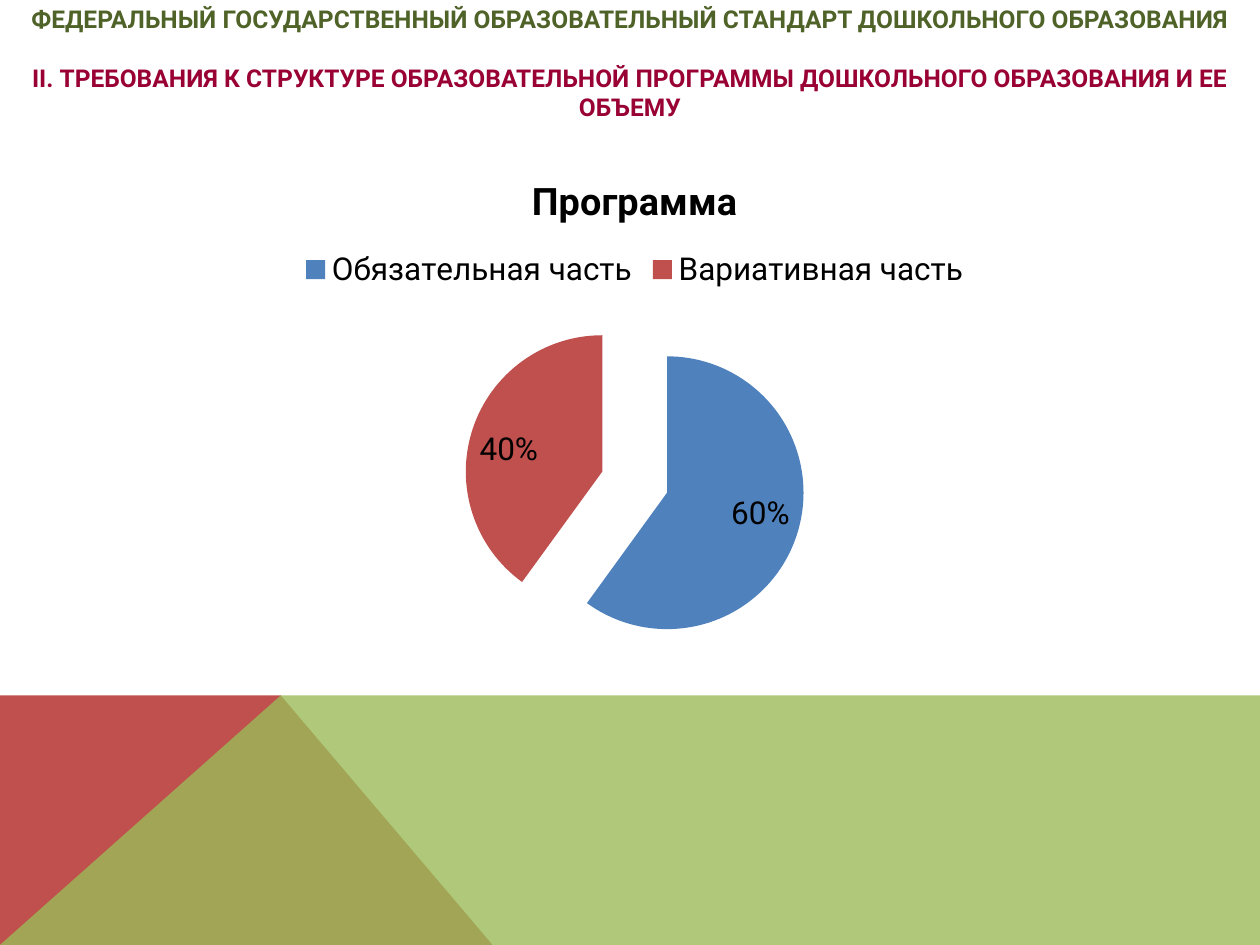
"""Build a slide with a pie chart of the parts of a preschool education programme."""
from dataclasses import dataclass
from typing import Optional

from lxml.etree import SubElement
from pptx import Presentation
from pptx.chart.data import CategoryChartData
from pptx.dml.color import RGBColor
from pptx.enum.chart import XL_CHART_TYPE, XL_LABEL_POSITION, XL_LEGEND_POSITION
from pptx.enum.text import MSO_ANCHOR, MSO_AUTO_SIZE, PP_ALIGN
from pptx.oxml import parse_xml
from pptx.oxml.ns import nsdecls, qn
from pptx.slide import Slide
from pptx.util import Cm, Pt

FONT = "Roboto"
WIDTH, HEIGHT, BAND_TOP, PEAK = 25.4, 19.05, 14.02, 5.66
COLORS = {
    "black": "000000",
    "heading": "4F6228",
    "subheading": "990033",
    "red": "C0504D",
    "blue": "4F81BD",
    "green": "9BBB59",
}


@dataclass
class Band:
    points: list[tuple[float, float]]
    color: str
    opacity: Optional[int] = None


@dataclass
class Heading:
    text: str
    color: str
    space_before: float = 0


@dataclass
class Part:
    name: str
    percent: int
    color: str


BANDS = [
    Band([(0, HEIGHT), (0, BAND_TOP), (PEAK, BAND_TOP), (9.93, HEIGHT)], "red"),
    Band([(0, HEIGHT), (PEAK, BAND_TOP), (WIDTH, BAND_TOP), (WIDTH, HEIGHT)], "green", 80),
]
HEADINGS = [
    Heading("ФЕДЕРАЛЬНЫЙ ГОСУДАРСТВЕННЫЙ ОБРАЗОВАТЕЛЬНЫЙ СТАНДАРТ ДОШКОЛЬНОГО ОБРАЗОВАНИЯ",
            "heading"),
    Heading("II. ТРЕБОВАНИЯ К СТРУКТУРЕ ОБРАЗОВАТЕЛЬНОЙ ПРОГРАММЫ ДОШКОЛЬНОГО ОБРАЗОВАНИЯ И ЕЕ ОБЪЕМУ",
            "subheading", 16.5),
]
PARTS = [
    Part("Обязательная часть", 60, "blue"),
    Part("Вариативная часть", 40, "red"),
]


def color_of(name: str) -> RGBColor:
    return RGBColor.from_string(COLORS[name])


def format_font(font, size: float, color: str, bold: bool = False) -> None:
    font.name = FONT
    font.size = Pt(size)
    font.bold = bold
    font.color.rgb = color_of(color)


def draw_band(slide: Slide, band: Band) -> None:
    points = [(Cm(x), Cm(y)) for x, y in band.points]
    builder = slide.shapes.build_freeform(*points[0])
    builder.add_line_segments(points[1:], close=True)
    shape = builder.convert_to_shape()
    shape.shadow.inherit = False
    shape.line.fill.background()
    shape.fill.solid()
    shape.fill.fore_color.rgb = color_of(band.color)
    if band.opacity is not None:
        color = shape.element.spPr.find(qn("a:solidFill")).find(qn("a:srgbClr"))
        SubElement(color, qn("a:alpha"), val=str(band.opacity * 1000))


def write_title(slide: Slide, headings: list[Heading]) -> None:
    title = slide.shapes.title
    title.left, title.top, title.width, title.height = Cm(0), Cm(0), Cm(WIDTH), Cm(2.54)
    frame = title.text_frame
    frame.word_wrap = True
    frame.auto_size = MSO_AUTO_SIZE.NONE
    frame.vertical_anchor = MSO_ANCHOR.MIDDLE
    for index, heading in enumerate(headings):
        paragraph = frame.add_paragraph() if index else frame.paragraphs[0]
        paragraph.alignment = PP_ALIGN.CENTER
        paragraph.space_before = Pt(heading.space_before)
        run = paragraph.add_run()
        run.text = heading.text
        format_font(run.font, 14, heading.color, bold=True)


def draw_pie(slide: Slide, name: str, parts: list[Part]) -> None:
    data = CategoryChartData()
    data.categories = [part.name for part in parts]
    data.add_series(name, [part.percent for part in parts])
    chart = slide.shapes.add_chart(
        XL_CHART_TYPE.PIE, Cm(2.29), Cm(3.05), Cm(21.01), Cm(10.46), data).chart
    format_font(chart.font, 18, "black")

    chart.has_title = True
    run = chart.chart_title.text_frame.paragraphs[0].add_run()
    run.text = name
    format_font(run.font, 21.6, "black", bold=True)

    chart.has_legend = True
    chart.legend.position = XL_LEGEND_POSITION.TOP
    chart.legend.include_in_layout = False
    format_font(chart.legend.font, 18, "black")

    plot = chart.plots[0]
    plot.vary_by_categories = True
    series = plot.series[0]
    for index, part in enumerate(parts):
        fill = series.points[index].format.fill
        fill.solid()
        fill.fore_color.rgb = color_of(part.color)
    explosion = parse_xml(f'<c:explosion {nsdecls("c")} val="25"/>')
    series._element.find(qn("c:dPt")).addprevious(explosion)

    plot.has_data_labels = True
    labels = plot.data_labels
    labels.show_percentage = True
    labels.show_value = False
    labels.number_format = "0%"
    labels.number_format_is_linked = False
    labels.position = XL_LABEL_POSITION.INSIDE_END
    format_font(labels.font, 18, "black")


def main() -> None:
    presentation = Presentation()
    presentation.slide_width, presentation.slide_height = Cm(WIDTH), Cm(HEIGHT)
    slide = presentation.slides.add_slide(presentation.slide_layouts[5])
    for band in BANDS:
        draw_band(slide, band)
    draw_pie(slide, "Программа", PARTS)
    write_title(slide, HEADINGS)
    presentation.save("out.pptx")


if __name__ == "__main__":
    main()
